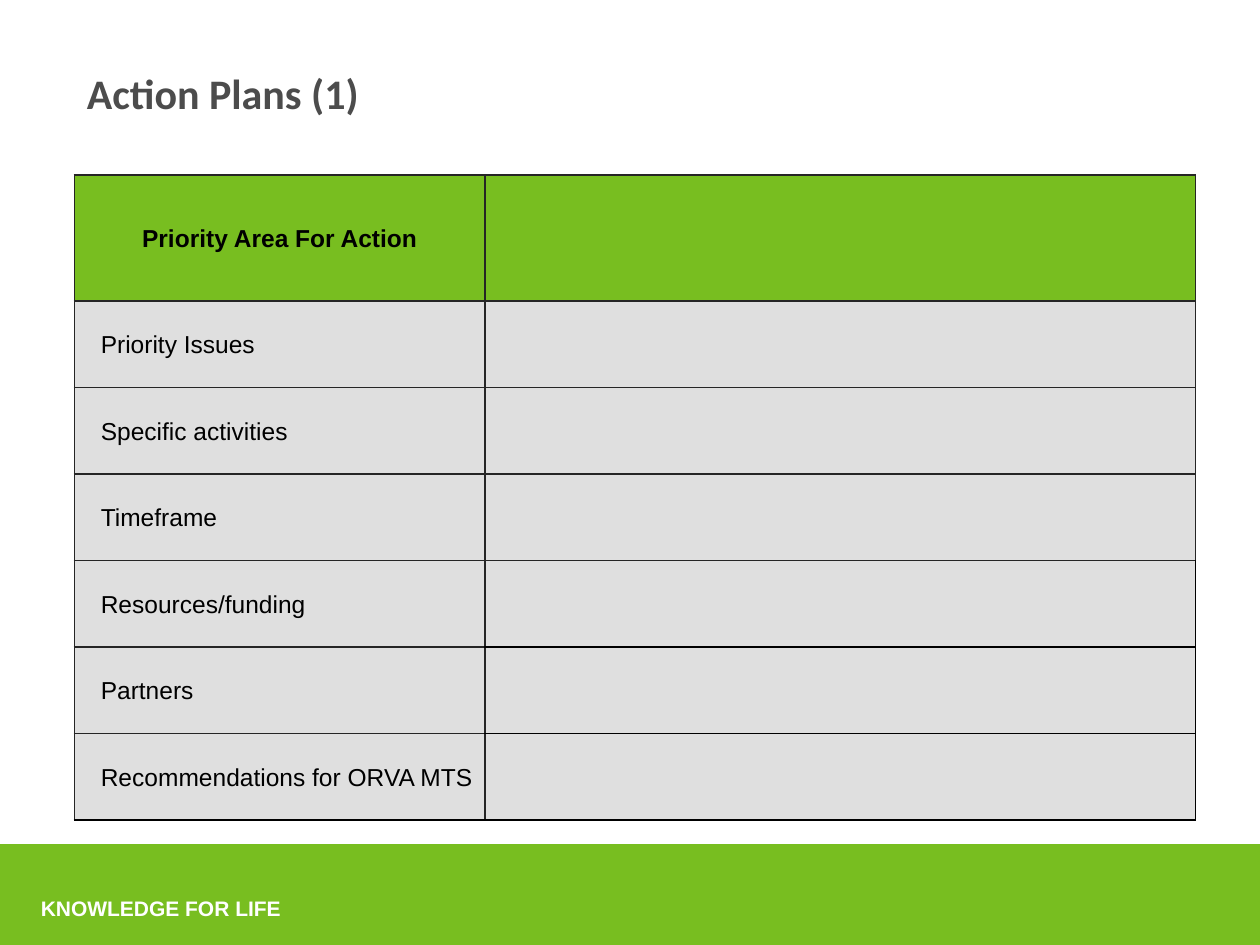
from lxml.etree import SubElement
from pptx import Presentation
from pptx.dml.color import RGBColor
from pptx.enum.shapes import MSO_SHAPE
from pptx.enum.text import MSO_ANCHOR, MSO_AUTO_SIZE, PP_ALIGN
from pptx.oxml.ns import qn
from pptx.util import Inches, Pt

GREEN, GREY, TITLE_GREY = "78BE20", "DFDFDF", "4C4C4C"
BLACK, DARK, WHITE = "000000", "252525", "FFFFFF"
HEADER = "Priority Area For Action"
TOPICS = ["Priority Issues", "Specific activities", "Timeframe",
          "Resources/funding", "Partners", "Recommendations for ORVA MTS"]
FIRST_BLACK_ROW = 4  # from this row on, the answer column has black edges


def rgb(value):
    return RGBColor.from_string(value)


def set_border(cell, side, color):
    """Draw a 1 pt line on one side: L, R, T or B."""
    ln = SubElement(cell._tc.get_or_add_tcPr(), qn(f"a:ln{side}"), w=str(Pt(1)))
    fill = SubElement(ln, qn("a:solidFill"))
    SubElement(fill, qn("a:srgbClr"), val=color)


class ActionSlide:
    font = "Arial"

    def __init__(self, prs):
        self.s = prs.slides.add_slide(prs.slide_layouts[5])

    def run(self, p, text, size, color, bold=False, font=None):
        r = p.add_run()
        r.text = text
        r.font.name = font or self.font
        r.font.size = Pt(size)
        r.font.bold = bold
        r.font.color.rgb = rgb(color)

    def title(self, text, left, top, width, height):
        sp = self.s.shapes.title
        sp.left, sp.top = Inches(left), Inches(top)
        sp.width, sp.height = Inches(width), Inches(height)
        tf = sp.text_frame
        tf.word_wrap = True
        tf.auto_size = MSO_AUTO_SIZE.NONE
        tf.vertical_anchor = MSO_ANCHOR.TOP
        p = tf.paragraphs[0]
        p.alignment = PP_ALIGN.LEFT
        p.line_spacing = Pt(37.2)
        self.run(p, text, 24, TITLE_GREY, True, "Calibri")

    def band(self, left, top, width, height):
        sp = self.s.shapes.add_shape(MSO_SHAPE.RECTANGLE, Inches(left), Inches(top),
                                     Inches(width), Inches(height))
        sp.shadow.inherit = False
        sp.fill.solid()
        sp.fill.fore_color.rgb = rgb(GREEN)
        sp.line.fill.background()

    def footer(self, text, left, top, width, height):
        sp = self.s.shapes.add_textbox(Inches(left), Inches(top),
                                       Inches(width), Inches(height))
        tf = sp.text_frame
        tf.word_wrap = False
        tf.auto_size = MSO_AUTO_SIZE.SHAPE_TO_FIT_TEXT
        p = tf.paragraphs[0]
        p.alignment = PP_ALIGN.RIGHT
        p.space_after = Pt(3)
        self.run(p, text, 12, WHITE, True)

    def label(self, cell, text, is_header):
        cell.vertical_anchor = MSO_ANCHOR.MIDDLE
        cell.margin_left = cell.margin_right = cell.margin_top = Inches(0.01)
        cell.margin_bottom = 0
        p = cell.text_frame.paragraphs[0]
        p.alignment = PP_ALIGN.CENTER if is_header else PP_ALIGN.JUSTIFY
        if not is_header:
            pPr = p._p.get_or_add_pPr()
            pPr.set("marL", str(Inches(0.2)))
            pPr.set("indent", "0")
        self.run(p, text, 14, BLACK, is_header)

    def plan_table(self, labels, left, top, widths, header_height, height):
        last = len(labels) - 1
        table = self.s.shapes.add_table(len(labels), len(widths), Inches(left), Inches(top),
                                        Inches(sum(widths)), Inches(height)).table
        for column, width in zip(table.columns, widths):
            column.width = Inches(width)
        for i, text in enumerate(labels):
            table.rows[i].height = Inches(
                header_height if i == 0 else (height - header_height) / last)
            self.label(table.cell(i, 0), text, i == 0)
            for j in range(len(widths)):
                cell = table.cell(i, j)
                black = set()
                if j == 1 and i >= FIRST_BLACK_ROW:
                    black = {"R", "B"} | ({"T"} if i > FIRST_BLACK_ROW else set())
                elif i == last:
                    black = {"B"}
                for side in "LRTB":
                    set_border(cell, side, BLACK if side in black else DARK)
                cell.fill.solid()
                cell.fill.fore_color.rgb = rgb(GREY if i else GREEN)


def main():
    prs = Presentation()
    prs.slide_width, prs.slide_height = Inches(10), Inches(7.5)
    slide = ActionSlide(prs)
    slide.band(0, 6.7, 10, 0.83)
    slide.footer("KNOWLEDGE FOR LIFE", 0.2, 7.06, 2.13, 0.3)
    slide.title("Action Plans (1)", 0.59, 0.37, 7.95, 0.58)
    slide.plan_table([HEADER] + TOPICS, 0.59, 1.39, [3.26, 5.64], 1, 5.12)
    prs.save("out.pptx")


if __name__ == "__main__":
    main()
